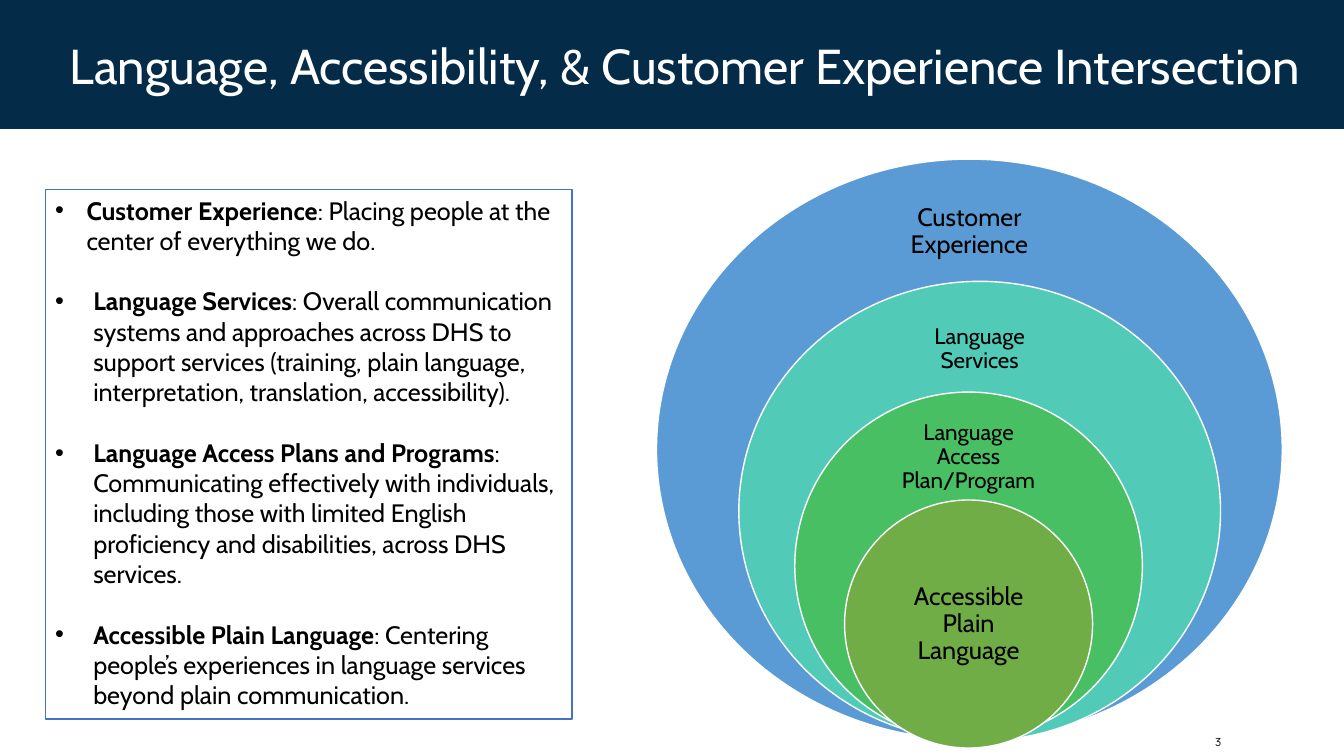
from dataclasses import dataclass

from lxml.etree import SubElement
from pptx import Presentation
from pptx.dml.color import RGBColor
from pptx.enum.shapes import MSO_SHAPE as Preset
from pptx.enum.text import MSO_ANCHOR as Anchor, MSO_AUTO_SIZE as AutoSize, PP_ALIGN as Align
from pptx.oxml.ns import qn
from pptx.util import Cm, Pt

FONT = "Cabin"
BLACK = "000000"
WHITE = "FFFFFF"


@dataclass
class Ring:
    """A nested ellipse and its label, both centred on one x (lengths in cm)."""
    text: str
    fill: str
    center: float
    top: float
    width: float
    height: float
    label_top: float
    label_width: float
    label_height: float
    size: int
    inset: float


@dataclass
class Term:
    name: str
    meaning: str
    indent: float = 0.96


RINGS = [
    Ring("Customer Experience", "5B9BD5", 24.43, 4.01, 15.77, 14.63, 4.75, 4.42, 2.18, 18, 0.36),
    Ring("Language Services", "52CAB8", 24.69, 7.09, 12.14, 11.58, 7.77, 4.24, 2.08, 16, 0.3),
    Ring("Language Access Plan/Program", "49BF64", 24.41, 9.88, 8.76, 8.76, 10.54, 4.09, 1.98, 16, 0.3),
    Ring("Accessible Plain Language", "70AD47", 24.41, 12.6, 6.25, 6.25, 14.17, 4.42, 3.12, 18, 0.36),
]

TERMS = [
    Term("Customer Experience", ": Placing people at the center of everything we do.", 0.79),
    Term("Language Services", ": Overall communication systems and approaches across DHS to support "
         "services (training, plain language, interpretation, translation, accessibility)."),
    Term("Language Access Plans and Programs", ": Communicating effectively with individuals, "
         "including those with limited English proficiency and disabilities, across DHS services."),
    Term("Accessible Plain Language", ": Centering people’s experiences in language services "
         "beyond plain communication."),
]


def color(value: str) -> RGBColor:
    return RGBColor.from_string(value)


def paint(shape, fill: str, line: str | None = None) -> None:
    shape.fill.solid()
    shape.fill.fore_color.rgb = color(fill)
    if line:
        shape.line.color.rgb = color(line)
        shape.line.width = Pt(1)


def place(shape, left: float, top: float, width: float, height: float) -> None:
    shape.left, shape.top, shape.width, shape.height = map(Cm, (left, top, width, height))


def frame_text(shape, anchor: Anchor, horizontal: float, vertical: float):
    """Prepare the text frame of a shape; insets are in cm."""
    frame = shape.text_frame
    frame.word_wrap = True
    frame.auto_size = AutoSize.NONE
    frame.vertical_anchor = anchor
    frame.margin_left = frame.margin_right = Cm(horizontal)
    frame.margin_top = frame.margin_bottom = Cm(vertical)
    return frame


def write(paragraph, text: str, *, size: float, font: str = FONT, fill: str = BLACK,
          bold: bool = False, align: Align = Align.LEFT, spacing: float = 1.0) -> None:
    paragraph.alignment = align
    paragraph.line_spacing = spacing
    run = paragraph.add_run()
    run.text = text
    run.font.name = font
    run.font.size = Pt(size)
    run.font.bold = bold
    run.font.color.rgb = color(fill)


def add_bullet(paragraph, indent: float) -> None:
    properties = paragraph._p.get_or_add_pPr()
    properties.set("marL", str(Cm(indent)))
    properties.set("indent", str(-Cm(indent)))
    SubElement(properties, qn("a:buFont"), typeface="Arial")
    SubElement(properties, qn("a:buChar"), char="•")


def add_title(slide) -> None:
    title = slide.shapes.title
    place(title, 0, 0, 33.88, 3.25)
    paint(title, "042B47")
    frame = frame_text(title, Anchor.MIDDLE, 0.18, 0.18)
    frame.margin_left = Cm(1.76)
    write(frame.paragraphs[0], "Language, Accessibility, & Customer Experience Intersection",
          size=35, fill=WHITE)


def add_terms(slide) -> None:
    body = slide.placeholders[1]
    place(body, 1.14, 4.78, 13.28, 13.34)
    paint(body, WHITE, "4472C4")
    frame = frame_text(body, Anchor.TOP, 0.25, 0.13)
    for index, term in enumerate(TERMS):
        paragraph = frame.add_paragraph() if index else frame.paragraphs[0]
        add_bullet(paragraph, term.indent)
        paragraph.space_before = Pt(21.75 if index else 0)
        write(paragraph, term.name, size=18, bold=True)
        write(paragraph, term.meaning, size=18)


def add_label(slide, text: str, box: tuple[float, float, float, float],
              horizontal: float, vertical: float, **text_format) -> None:
    label = slide.shapes.add_textbox(*map(Cm, box))
    frame = frame_text(label, Anchor.MIDDLE, horizontal, vertical)
    write(frame.paragraphs[0], text, **text_format)


def add_ring(slide, ring: Ring) -> None:
    ellipse = slide.shapes.add_shape(
        Preset.OVAL, Cm(ring.center - ring.width / 2), Cm(ring.top), Cm(ring.width), Cm(ring.height))
    ellipse.shadow.inherit = False
    paint(ellipse, ring.fill, WHITE)
    box = (ring.center - ring.label_width / 2, ring.label_top, ring.label_width, ring.label_height)
    add_label(slide, ring.text, box, ring.inset, ring.inset,
              size=ring.size, align=Align.CENTER, spacing=0.9)


def main() -> None:
    presentation = Presentation()
    presentation.slide_width, presentation.slide_height = Cm(33.87), Cm(19.05)
    slide = presentation.slides.add_slide(presentation.slide_layouts[1])
    add_title(slide)
    add_terms(slide)
    for ring in RINGS:
        add_ring(slide, ring)
    add_label(slide, "3", (28.85, 18.34, 2.11, 0.71), 0.18, 0.08,
              size=8, font="Manrope", align=Align.RIGHT)
    presentation.save("out.pptx")


if __name__ == "__main__":
    main()
